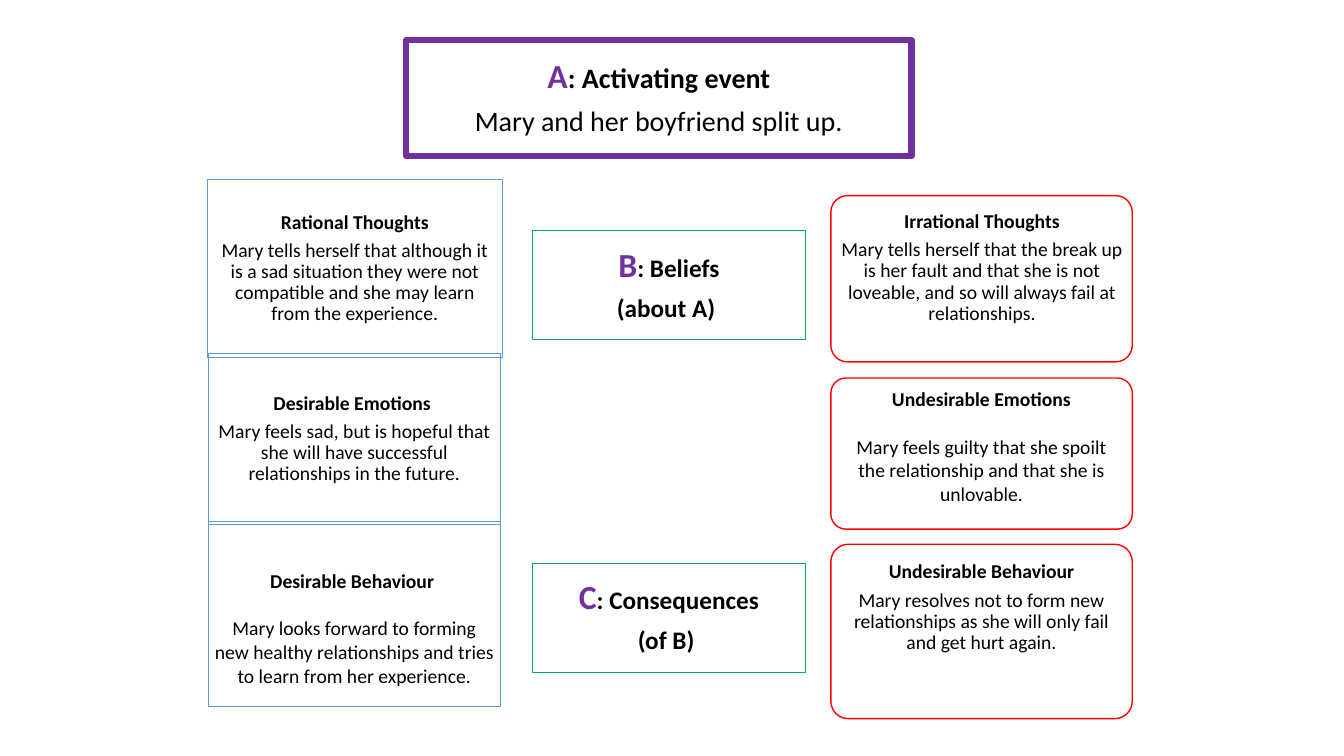
from dataclasses import dataclass
from typing import NamedTuple, Optional

from pptx import Presentation
from pptx.dml.color import RGBColor
from pptx.enum.shapes import MSO_SHAPE
from pptx.enum.text import MSO_ANCHOR, PP_ALIGN
from pptx.util import Pt

SCALE = 9144  # EMU per px, 100 px to the inch


@dataclass(frozen=True)
class Theme:
    font: str = "Calibri"
    white: str = "FFFFFF"
    black: str = "000000"
    purple: str = "7030A0"
    green: str = "00B050"
    blue: str = "5B9BD5"
    red: str = "FF0000"
    letter: int = 24
    event: int = 20
    stage: int = 18
    note: int = 14
    plate: float = 1
    thin: float = 0.75
    thick: float = 4.5


class Box(NamedTuple):
    left: int
    top: int
    width: int
    height: int


class Pad(NamedTuple):
    left: int
    top: int
    right: int
    bottom: int


@dataclass(frozen=True)
class Card:
    plate: Box
    edge: str
    label: Optional[Box]  # None puts the text on the plate itself
    rim: Optional[str]  # None leaves the label without a line
    head: str
    body: str
    pad: Pad
    size: int = 14
    letter: str = ""
    bold: bool = False
    weight: float = 0.75
    pitch: float = 0.9
    gap: int = 5


T = Theme()
LEFT, RIGHT, WIDE = 202, 824, 299
SIX, FIVE = Pad(6, 6, 6, 6), Pad(5, 5, 5, 5)
SEVEN, EIGHT = Pad(7, 7, 7, 7), Pad(8, 8, 8, 8)

CARDS = [
    # Middle column: the A, B and C stages
    Card(Box(399, 36, 508, 122), T.white, Box(403, 40, 501, 115), T.purple,
         ": Activating event", "Mary and her boyfriend split up.", EIGHT,
         T.event, "A", weight=T.thick, gap=8),
    Card(Box(525, 225, 277, 114), T.white, Box(528, 229, 271, 108), T.green,
         ": Beliefs", "(about A) ", SEVEN, T.stage, "B", True, gap=8),
    Card(Box(525, 556, 277, 114), T.white, Box(528, 559, 271, 108), T.green,
         ": Consequences", "(of B) ", SEVEN, T.stage, "C", True, gap=8),
    # Thoughts
    Card(Box(LEFT, 194, WIDE, 166), T.white, Box(206, 178, 292, 177), T.blue,
         "Rational Thoughts",
         "Mary tells herself that although it is a sad situation they were "
         "not compatible and she may learn from the experience.", SIX),
    Card(Box(RIGHT, 194, WIDE, 165), T.red, Box(828, 178, 292, 176), None,
         "Irrational Thoughts",
         "Mary tells herself that the break up is her fault and that she is "
         "not loveable, and so will always fail at relationships.", SIX),
    # Emotions
    Card(Box(LEFT, 375, WIDE, 150), T.white, Box(207, 351, 289, 169), T.blue,
         "Desirable Emotions ",
         "Mary feels sad, but is hopeful that she will have successful "
         "relationships in the future.", FIVE),
    Card(Box(RIGHT, 375, WIDE, 150), T.red, None, None,
         "Undesirable Emotions",
         "Mary feels guilty that she spoilt the relationship and that she is "
         "unlovable.", Pad(10, 5, 10, 5), pitch=1.0, gap=17),
    # Behaviour
    Card(Box(RIGHT, 540, WIDE, 173), T.red, Box(829, 525, 289, 184), None,
         "Undesirable Behaviour",
         "Mary resolves not to form new relationships as she will only fail "
         "and get hurt again.", Pad(5, 5, 5, 33)),
    Card(Box(LEFT, 540, WIDE, 165), T.white, Box(207, 517, 289, 184), T.blue,
         "Desirable Behaviour ",
         "Mary looks forward to forming new healthy relationships and tries "
         "to learn from her experience.", Pad(5, 33, 5, 5),
         pitch=1.0, gap=17),
]


def px(vals: tuple) -> list:
    return [val * SCALE for val in vals]


def apply(item, form: dict) -> None:
    for name, val in form.items():
        setattr(item, name, val)


def outline(shape, color: str, weight: float) -> None:
    shape.shadow.inherit = False
    shape.line.color.rgb = RGBColor.from_string(color)
    shape.line.width = Pt(weight)


def add_plate(shapes, card: Card):
    shape = shapes.add_shape(MSO_SHAPE.ROUNDED_RECTANGLE, *px(card.plate))
    shape.adjustments[0] = 0.1
    shape.fill.solid()
    shape.fill.fore_color.rgb = RGBColor.from_string(T.white)
    outline(shape, card.edge, T.plate)
    return shape


def add_label(shapes, card: Card):
    if card.rim is None:
        return shapes.add_textbox(*px(card.label))
    shape = shapes.add_shape(MSO_SHAPE.RECTANGLE, *px(card.label))
    shape.fill.background()
    outline(shape, card.rim, card.weight)
    return shape


def add_run(para, text: str, size: int, color: str, bold: bool) -> None:
    run = para.add_run()
    run.text = text
    apply(run.font, {"name": T.font, "size": Pt(size), "bold": bold})
    run.font.color.rgb = RGBColor.from_string(color)


def write(shape, card: Card) -> None:
    frame = shape.text_frame
    left, top, right, bottom = px(card.pad)
    apply(frame, {
        "word_wrap": True,
        "vertical_anchor": MSO_ANCHOR.MIDDLE if card.label else MSO_ANCHOR.TOP,
        "margin_left": left, "margin_top": top,
        "margin_right": right, "margin_bottom": bottom,
    })
    head, body = frame.paragraphs[0], frame.add_paragraph()
    for para in (head, body):
        apply(para, {"alignment": PP_ALIGN.CENTER, "line_spacing": card.pitch,
                     "space_after": Pt(card.gap)})
    if card.pitch == 1:
        body.space_after = Pt(0)
    if card.letter:
        add_run(head, card.letter, T.letter, T.purple, True)
    add_run(head, card.head, card.size, T.black, True)
    add_run(body, card.body, card.size, T.black, card.bold)


def draw(shapes, card: Card) -> None:
    if card.label is None:
        write(add_plate(shapes, card), card)
        return
    group = shapes.add_group_shape().shapes
    add_plate(group, card)
    write(add_label(group, card), card)


def main() -> None:
    deck = Presentation()
    apply(deck, {"slide_width": 1333 * SCALE, "slide_height": 750 * SCALE})
    slide = deck.slides.add_slide(deck.slide_layouts[6])
    for card in CARDS:
        draw(slide.shapes, card)
    deck.save("out.pptx")


if __name__ == "__main__":
    main()
